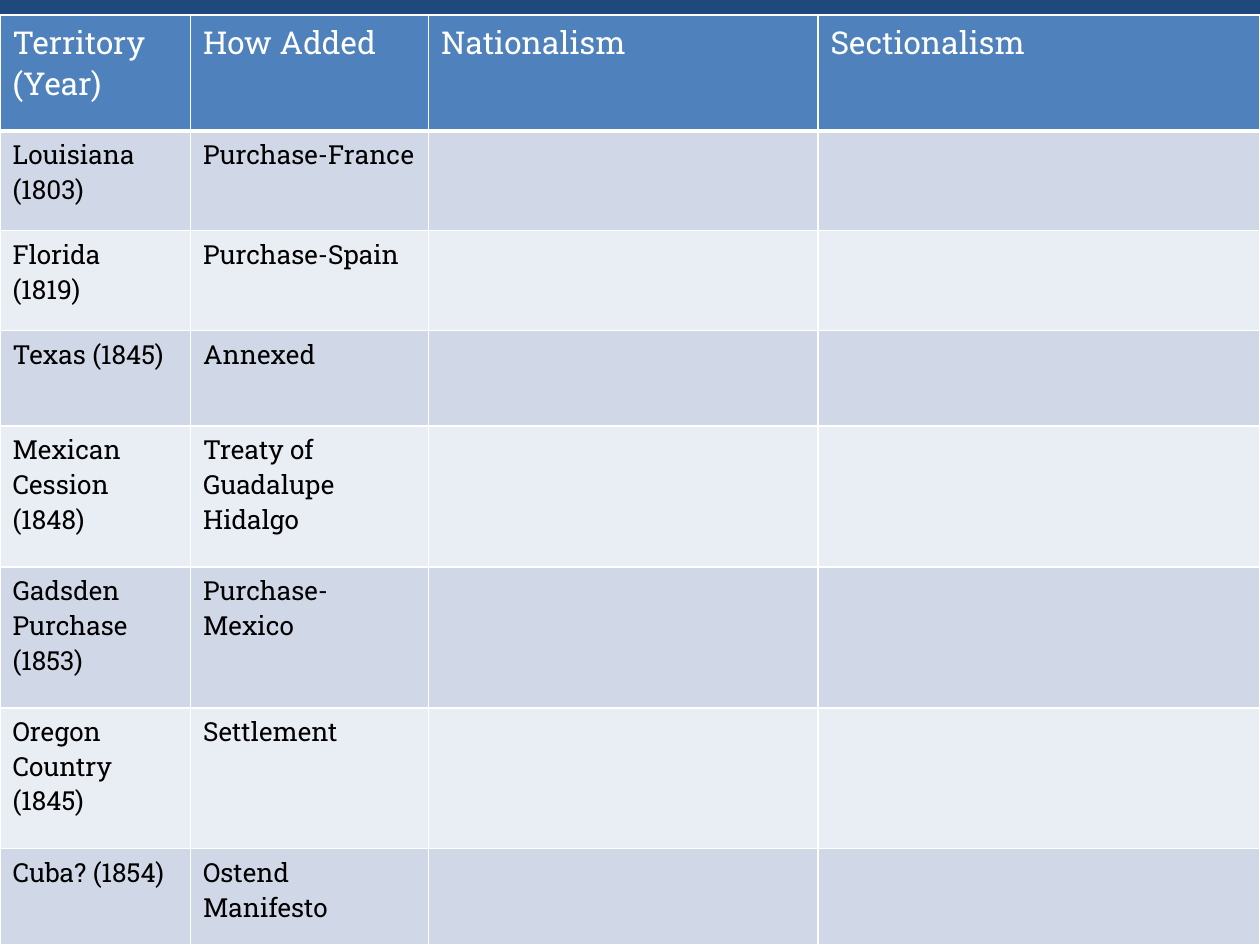
from lxml import etree
from pptx import Presentation
from pptx import util as u
from pptx.dml.color import RGBColor
from pptx.oxml.ns import qn

NAVY = RGBColor(0x1F, 0x49, 0x7D)
BLUE = RGBColor(0x4F, 0x81, 0xBD)
BAND_DARK = RGBColor(0xD0, 0xD8, 0xE8)
BAND_LIGHT = RGBColor(0xE9, 0xED, 0xF4)
WHITE = RGBColor(0xFF, 0xFF, 0xFF)
BLACK = RGBColor(0, 0, 0)
FONT = "Roboto Slab"

COLUMN_WIDTHS = [3.84, 4.8, 7.85, 8.91]
ROW_HEIGHTS = [2.34, 2.01, 2.01, 1.93, 2.84, 2.84, 2.84, 1.93]
ROWS = [
    ["Territory (Year)", "How Added", "Nationalism", "Sectionalism"],
    ["Louisiana (1803)", "Purchase-France", "", ""],
    ["Florida\n(1819)", "Purchase-Spain", "", ""],
    ["Texas (1845)", "Annexed", "", ""],
    ["Mexican Cession (1848)", "Treaty of Guadalupe Hidalgo", "", ""],
    ["Gadsden Purchase (1853)", "Purchase- Mexico", "", ""],
    ["Oregon Country (1845)", "Settlement", "", ""],
    ["Cuba? (1854)", "Ostend Manifesto", "", ""],
]


def set_borders(cell, bottom_width):
    """Draw white lines on all four sides; call before setting the fill."""
    properties = cell._tc.get_or_add_tcPr()
    for side, width in (("L", 1), ("R", 1), ("T", 1), ("B", bottom_width)):
        line = etree.SubElement(properties, qn(f"a:ln{side}"), w=str(u.Pt(width)))
        fill = etree.SubElement(line, qn("a:solidFill"))
        etree.SubElement(fill, qn("a:srgbClr"), val=str(WHITE))


def style_cell(cell, row_number):
    is_header = row_number == 0
    set_borders(cell, 3 if is_header else 1)
    cell.fill.solid()
    band = BAND_DARK if row_number % 2 else BAND_LIGHT
    cell.fill.fore_color.rgb = BLUE if is_header else band
    for paragraph in cell.text_frame.paragraphs:
        font = paragraph.font
        font.name = FONT
        font.size = u.Pt(18 if is_header else 15)
        font.bold = False
        font.color.rgb = WHITE if is_header else BLACK


def add_territory_table(slide, left, top, width, height):
    frame = slide.shapes.add_table(
        len(ROWS), len(COLUMN_WIDTHS), left, top, width, height)
    table = frame.table
    for column, column_width in zip(table.columns, COLUMN_WIDTHS):
        column.width = u.Cm(column_width)
    for row_number, (row, row_height) in enumerate(zip(table.rows, ROW_HEIGHTS)):
        row.height = u.Cm(row_height)
        for cell, words in zip(row.cells, ROWS[row_number]):
            cell.text_frame.text = words
            style_cell(cell, row_number)


def main():
    presentation = Presentation()
    presentation.slide_width = u.Cm(25.4)
    presentation.slide_height = u.Cm(19.05)
    slide = presentation.slides.add_slide(presentation.slide_layouts[6])

    # Navy background
    slide.background.fill.solid()
    slide.background.fill.fore_color.rgb = NAVY

    # Table of territories, filling the slide below a thin strip
    top = u.Cm(0.3)
    add_territory_table(slide, 0, top, presentation.slide_width,
                        presentation.slide_height - top)
    presentation.save("out.pptx")


if __name__ == "__main__":
    main()
